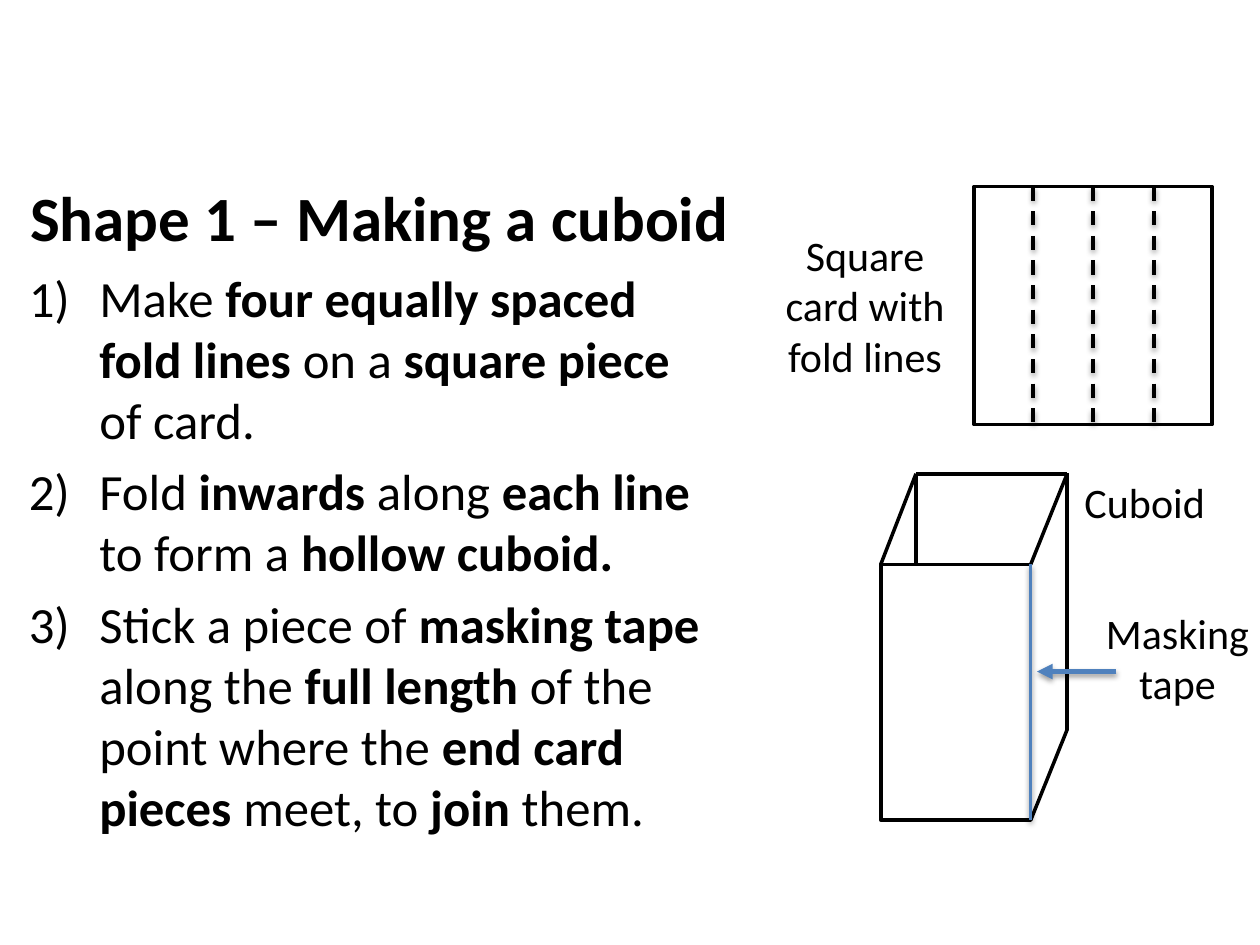
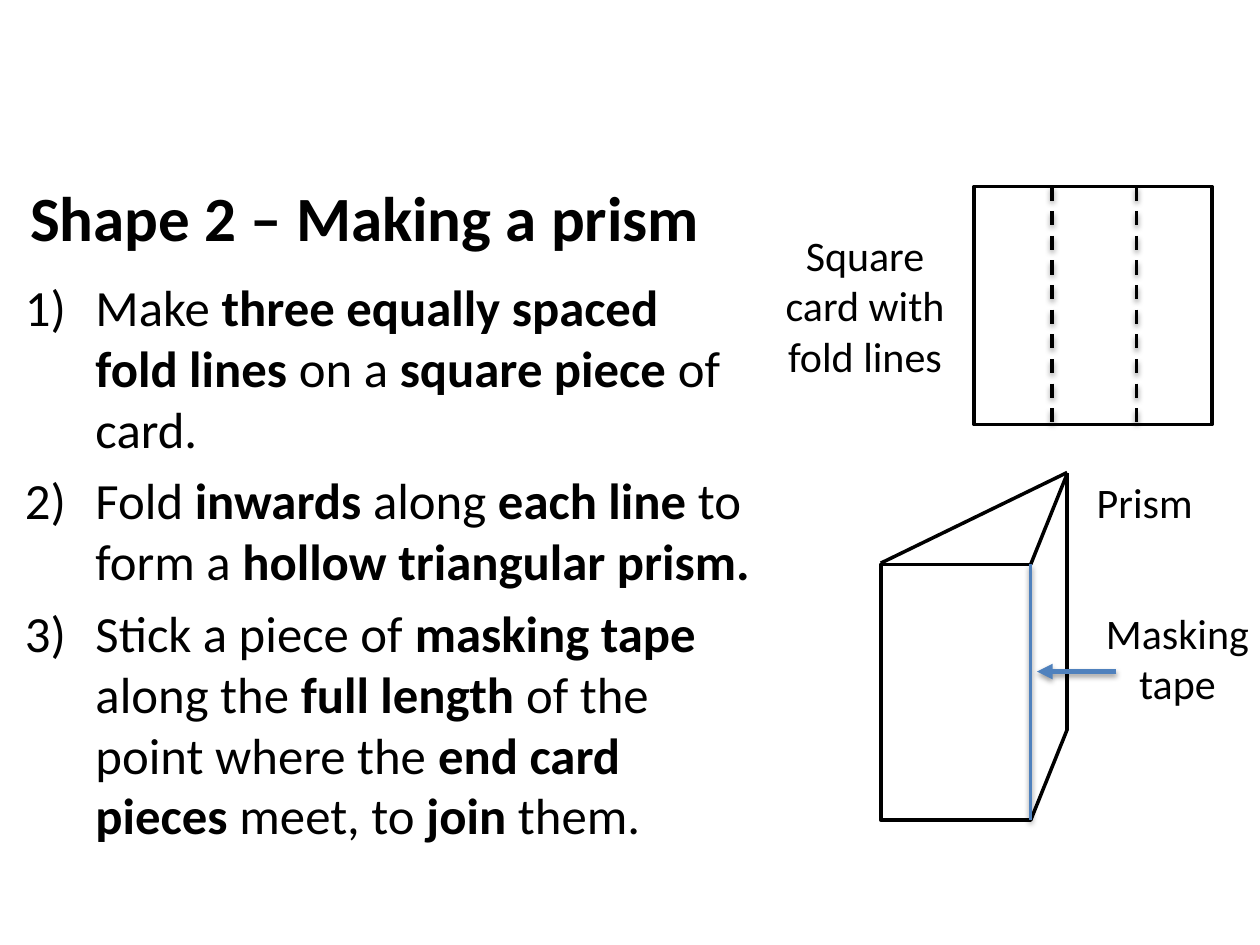
from lxml.etree import SubElement as Sub
from pptx import Presentation
from pptx.dml.color import RGBColor as RGB
from pptx.enum.dml import MSO_LINE_DASH_STYLE as Dash
from pptx.enum.shapes import MSO_CONNECTOR as Conn, MSO_SHAPE as Shape
from pptx.enum.text import MSO_ANCHOR as Anchor, MSO_AUTO_SIZE as Fit, PP_ALIGN as Align
from pptx.oxml.ns import qn
from pptx.util import Inches, Pt

BLACK, WHITE, BLUE = "000000", "FFFFFF", "4F81BD"
FONT = "Calibri"
TITLE = {"size": Pt(36), "bold": True}
STEP = {"size": Pt(29)}
LABEL = {"size": Pt(24)}

# Card and front face of the solid: left, top, width, height
CARD = (7.73, 1.48, 1.89, 1.89)
FRONT = (6.99, 4.48, 1.19, 2.03)

# Edges as x1, y1, x2, y2
SIDE = [(8.18, 4.48, 8.47, 3.76), (8.18, 6.51, 8.47, 5.79), (8.47, 5.79, 8.47, 3.75)]
BOX_TOP = [(6.99, 4.48, 7.27, 3.76), (7.27, 3.76, 8.47, 3.76), (7.27, 4.48, 7.27, 3.76)]
PRISM_TOP = [(6.99, 4.47, 8.47, 3.75)]
TAPE = (8.18, 4.48, 8.18, 6.51)
ARROW = (8.86, 5.33, 8.23, 5.33)

# Steps, with bold parts between asterisks
MAKE = "Make *{} equally spaced fold lines* on a *square piece *of card."
FOLD = "Fold *inwards* along *each line* to form a *hollow {}.*"
STICK = ("Stick a piece of *masking tape *along the *full length *of the point "
         "where the *end card pieces *meet, to *join* them.")


def color(text):
    return RGB.from_string(text)


def style(font, look):
    font.name = FONT
    font.color.rgb = color(BLACK)
    for key, value in look.items():
        setattr(font, key, value)


def frame(box):
    text = box.text_frame
    text.word_wrap = True
    text.auto_size = Fit.SHAPE_TO_FIT_TEXT
    text.vertical_anchor = Anchor.TOP
    return text


def title(slide, text):
    box = slide.shapes.title
    place = {"left": 0.14, "top": 1.37, "width": 9.34, "height": 0.71}
    for key, value in place.items():
        setattr(box, key, Inches(value))
    para = frame(box).paragraphs[0]
    para.alignment = Align.LEFT
    run = para.add_run()
    run.text = text
    style(run.font, TITLE)


def label(slide, text, *area):
    box = slide.shapes.add_textbox(*map(Inches, area))
    para = frame(box).paragraphs[0]
    para.alignment = Align.CENTER
    run = para.add_run()
    run.text = text
    style(run.font, LABEL)


def steps(slide, items, *area):
    text = frame(slide.shapes.add_textbox(*map(Inches, area)))
    for index, item in enumerate(items):
        para = text.add_paragraph() if index else text.paragraphs[0]
        para.space_after = Pt(6)
        props = para._p.get_or_add_pPr()
        props.set("marL", str(Inches(0.56)))
        props.set("indent", str(-Inches(0.56)))
        Sub(props, qn("a:buFont"), typeface="+mj-lt")
        Sub(props, qn("a:buAutoNum"), type="arabicParenR")
        for part, words in enumerate(item.split("*")):
            if words:
                run = para.add_run()
                run.text = words
                style(run.font, {**STEP, "bold": part % 2 == 1})


def rect(shapes, area):
    box = shapes.add_shape(Shape.RECTANGLE, *map(Inches, area))
    box.shadow.inherit = False
    box.fill.solid()
    box.fill.fore_color.rgb = color(WHITE)
    box.line.color.rgb = color(BLACK)
    box.line.width = Pt(2)
    return box


def line(shapes, ends, ink=BLACK, width=2, shade=False, dash=False, head=False):
    edge = shapes.add_connector(Conn.STRAIGHT, *map(Inches, ends))
    edge.line.color.rgb = color(ink)
    edge.line.width = Pt(width)
    if dash:
        edge.line.dash_style = Dash.DASH
    if head:
        Sub(edge.line._get_or_add_ln(), qn("a:tailEnd"), type="triangle")
    effects = Sub(edge._element.spPr, qn("a:effectLst"))
    if shade:
        shadow = Sub(effects, qn("a:outerShdw"), blurRad=str(Pt(3.1)),
                     dist=str(Pt(1.6)), dir="5400000", rotWithShape="0")
        tone = Sub(shadow, qn("a:srgbClr"), val=BLACK)
        Sub(tone, qn("a:alpha"), val="38000")
    return edge


def card(slide, first, gap, count):
    """Draw the square card with its dashed fold lines."""
    left, top, width, height = CARD
    box = rect(slide.shapes, CARD)
    for index in range(count):
        x = first + index * gap
        fold = line(slide.shapes, (x, top, x, top + height), shade=True, dash=True)
        if abs(x - left - width / 2) < 0.02:
            fold.begin_connect(box, 0)
            fold.end_connect(box, 2)
    label(slide, "Square card with fold lines", 5.99, 1.77, 1.75, 1.31)


def solid(slide, name, edges):
    """Draw the hollow solid, its tape and its labels."""
    group = slide.shapes.add_group_shape().shapes
    rect(group, FRONT)
    for ends in edges + SIDE:
        line(group, ends)
    line(group, TAPE, BLUE, shade=True)
    label(slide, name, 8.21, 3.73, 1.75, 0.5)
    label(slide, "Masking tape", 8.47, 4.77, 1.75, 0.91)
    line(slide.shapes, ARROW, BLUE, 3, shade=True, head=True)


def page(deck, head, number, form, area, folds, name, edges):
    slide = deck.slides.add_slide(deck.slide_layouts[5])
    title(slide, head)
    steps(slide, [MAKE.format(number), FOLD.format(form), STICK], *area)
    card(slide, *folds)
    solid(slide, name, edges)


def main():
    deck = Presentation()
    deck.slide_width, deck.slide_height = Inches(10), Inches(7.5)
    page(deck, "Shape 1 – Making a cuboid", "four", "cuboid",
         (0.13, 2.07, 5.71, 4.66), (8.2, 0.48, 3), "Cuboid", BOX_TOP)
    page(deck, "Shape 2 – Making a prism", "three", "triangular prism",
         (0.1, 2.14, 5.97, 4.66), (8.35, 0.67, 2), "Prism", PRISM_TOP)
    deck.save("out.pptx")


if __name__ == "__main__":
    main()
